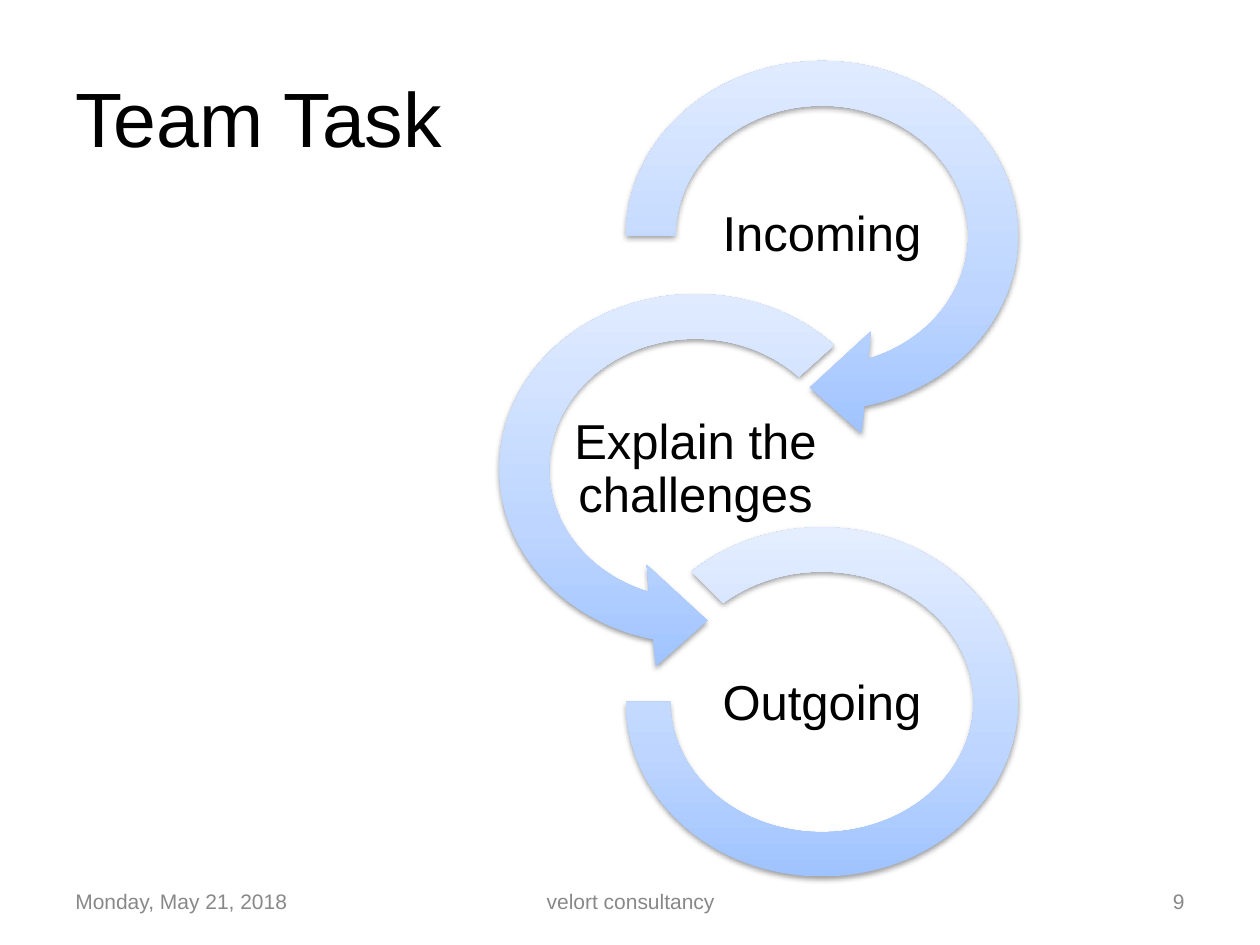
import math

import lxml.etree
import pptx
import pptx.dml.color
import pptx.enum.shapes
import pptx.enum.text
import pptx.oxml.ns
import pptx.util

Cm = pptx.util.Cm
ALIGN = pptx.enum.text.PP_ALIGN
qn = pptx.oxml.ns.qn


def rgb(value):
    return pptx.dml.color.RGBColor.from_string(value)


def arc_curves(rx, ry, start, end, count=3):
    """Cubic curves (two controls and an end point each) along an ellipse round the origin."""
    step = math.radians(end - start) / count
    k = 4 / 3 * math.tan(step / 4)
    curves = []
    for i in range(count):
        a = math.radians(start) + i * step
        b = a + step
        unit = [(math.cos(a) - k * math.sin(a), math.sin(a) + k * math.cos(a)),
                (math.cos(b) + k * math.sin(b), math.sin(b) - k * math.cos(b)),
                (math.cos(b), math.sin(b))]
        curves.append([(rx * x, ry * y) for x, y in unit])
    return curves


def ellipse_point(rx, ry, angle):
    a = math.radians(angle)
    return rx * math.cos(a), ry * math.sin(a)


class SlideBuilder:
    font = "Arial"
    text_color = "000000"
    footer_color = "888888"
    gradient = [(0, "9FC3FF"), (35, "BDD5FF"), (100, "E4EEFF")]
    frame = (4.6, 4.09)
    outer = (3.95, 3.52)
    inner = (2.95, 2.62)
    head = [(0.8, 3.99), (-0.24, 3.06), (0.98, 1.94)]

    def __init__(self, s):
        self.s = s

    def text(self, x, y, w, h, text, size, color=text_color, align=ALIGN.LEFT,
             inset=(0.25, 0.13), spacing=None):
        sp = self.s.shapes.add_textbox(Cm(x), Cm(y), Cm(w), Cm(h))
        tf = sp.text_frame
        tf.word_wrap = True
        tf.vertical_anchor = pptx.enum.text.MSO_ANCHOR.MIDDLE
        tf.margin_left = tf.margin_right = Cm(inset[0])
        tf.margin_top = tf.margin_bottom = Cm(inset[1])
        p = tf.paragraphs[0]
        p.alignment = align
        p.line_spacing = spacing
        r = p.add_run()
        r.text = text
        r.font.name = self.font
        r.font.size = pptx.util.Pt(size)
        r.font.color.rgb = rgb(color)

    def label(self, cx, cy, text):
        w, h = 5.11, 2.26
        self.text(cx - w / 2, cy - h / 2, w, h, text, 28, align=ALIGN.CENTER,
                  inset=(0.05, 0.05), spacing=0.9)

    def footer(self, x, w, text, align):
        self.text(x, 17.65, w, 1.02, text, 12, self.footer_color, align)

    def style(self, sp):
        """Three-stop vertical gradient, no line, soft shadow below."""
        sp.line.fill.background()
        sp.fill.gradient()
        sp.fill.gradient_angle = 90
        stops = sp.element.spPr.find(qn("a:gradFill")).find(qn("a:gsLst"))
        for gs in list(stops):
            stops.remove(gs)
        for pos, color in self.gradient:
            gs = lxml.etree.SubElement(stops, qn("a:gs"), pos=str(pos * 1000))
            lxml.etree.SubElement(gs, qn("a:srgbClr"), val=color)
        sp.shadow.inherit = False
        effects = sp.element.spPr.find(qn("a:effectLst"))
        shadow = lxml.etree.SubElement(effects, qn("a:outerShdw"), blurRad="40000",
                                       dist="20000", dir="5400000", rotWithShape="0")
        color = lxml.etree.SubElement(shadow, qn("a:srgbClr"), val="000000")
        lxml.etree.SubElement(color, qn("a:alpha"), val="38000")

    def circle_arrow(self, cx, cy, start, side):
        """Arrow from start round to the bottom; side -1 mirrors it left to right."""
        fx, fy = self.frame
        corners = [(Cm(cx + i * fx), Cm(cy + j * fy))
                   for i, j in ((-1, -1), (1, -1), (1, 1), (-1, 1))]
        builder = self.s.shapes.build_freeform(*corners[0])
        builder.add_line_segments(corners[1:], close=True)
        sp = builder.convert_to_shape()

        outline = next(sp.element.iter(qn("a:path")))
        for step in list(outline):
            outline.remove(step)

        def draw(tag, points):
            step = lxml.etree.SubElement(outline, qn(tag))
            for x, y in points:
                lxml.etree.SubElement(step, qn("a:pt"), x=str(Cm(fx + side * x)),
                                      y=str(Cm(fy + y)))

        draw("a:moveTo", [ellipse_point(*self.outer, start)])
        for curve in arc_curves(*self.outer, start, 437.5):
            draw("a:cubicBezTo", curve)
        for point in self.head + [ellipse_point(*self.inner, 431.5)]:
            draw("a:lnTo", [point])
        for curve in arc_curves(*self.inner, 431.5, start):
            draw("a:cubicBezTo", curve)
        draw("a:close", [])
        self.style(sp)

    def block_arc(self, cx, cy):
        rx, ry = self.outer
        sp = self.s.shapes.add_shape(pptx.enum.shapes.MSO_SHAPE.BLOCK_ARC, Cm(cx - rx),
                                     Cm(cy - ry), Cm(2 * rx), Cm(2 * ry))
        for i, value in enumerate((135, 108, 0.127)):
            sp.adjustments[i] = value
        self.style(sp)


def main():
    prs = pptx.Presentation()
    prs.slide_width, prs.slide_height = Cm(25.4), Cm(19.05)
    b = SlideBuilder(prs.slides.add_slide(prs.slide_layouts[6]))

    b.text(1.27, 0.76, 22.86, 3.18, "Team Task", 44)

    right, left, top = 16.57, 14.02, 4.75
    ring_pitch, label_pitch = 4.7, 4.73
    b.circle_arrow(right, top, 180, 1)
    b.circle_arrow(left, top + ring_pitch, 225, -1)
    b.block_arc(right, top + 2 * ring_pitch)
    labels = [(right, "Incoming"), (left, "Explain the challenges"), (right, "Outgoing")]
    for i, (cx, text) in enumerate(labels):
        b.label(cx, top + i * label_pitch, text)

    b.footer(1.27, 5.92, "Monday, May 21, 2018", ALIGN.LEFT)
    b.footer(8.69, 8.05, "velort consultancy", ALIGN.CENTER)
    b.footer(18.21, 5.92, "9", ALIGN.RIGHT)

    prs.save("out.pptx")


if __name__ == "__main__":
    main()
